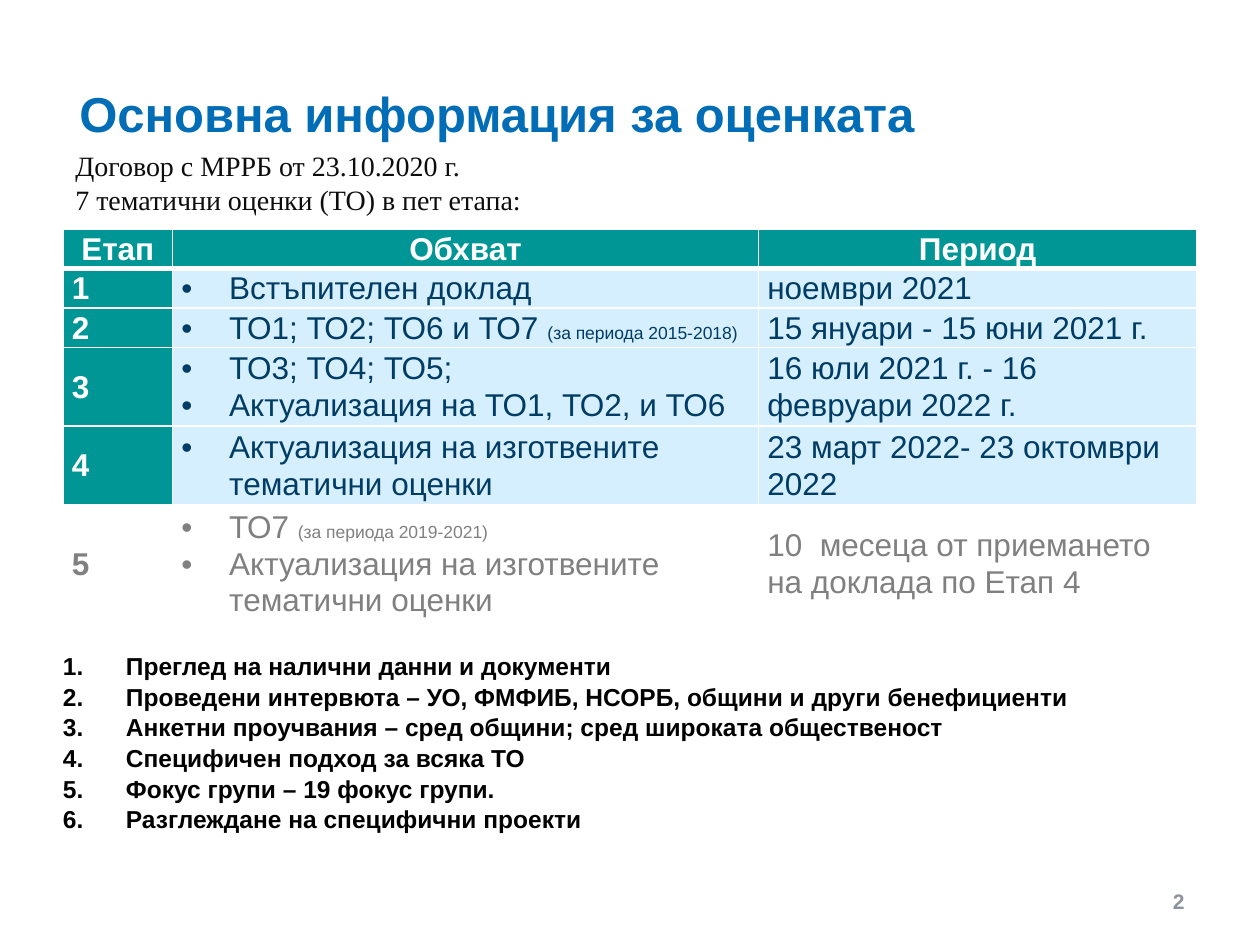
from dataclasses import dataclass
from lxml.etree import SubElement
from pptx import Presentation
from pptx.dml.color import RGBColor
from pptx.enum.text import MSO_ANCHOR, PP_ALIGN
from pptx.oxml.ns import qn
from pptx.util import Inches, Pt


@dataclass(frozen=True)
class Theme:
    sans: str = "Arial"
    serif: str = "Times New Roman"
    blue: str = "006DB6"
    teal: str = "009696"
    navy: str = "003C64"
    pale: str = "D6EFFF"
    white: str = "FFFFFF"
    grey: str = "808080"
    slate: str = "8C929F"
    ink: str = "0D0D0D"
    black: str = "000000"
    head: int = 28
    body: int = 18
    intro: int = 16
    item: int = 14
    page: int = 12
    note: int = 10


T = Theme()
HEADS = ("Етап", "Обхват", "Период")
# Each stage: scope lines (text, small note) and period.
STAGES = (
    ([("Встъпителен доклад", "")], "ноември 2021"),
    ([("ТО1; ТО2; ТО6 и ТО7 ", "(за периода 2015-2018)")],
     "15 януари - 15 юни 2021 г."),
    ([("ТО3; ТО4; ТО5;", ""), ("Актуализация на ТО1, ТО2, и ТО6", "")],
     "16 юли 2021 г. - 16 февруари 2022 г."),
    ([("Актуализация на изготвените тематични оценки", "")],
     "23 март 2022- 23 октомври 2022"),
    ([("ТО7 ", "(за периода 2019-2021)"),
      ("Актуализация на изготвените тематични оценки", "")],
     "10  месеца от приемането на доклада по Етап 4"),
)
STEPS = (
    "Преглед на налични данни и документи",
    "Проведени интервюта – УО, ФМФИБ, НСОРБ, общини и други бенефициенти",
    "Анкетни проучвания – сред общини; сред широката общественост",
    "Специфичен подход за всяка ТО",
    "Фокус групи – 19 фокус групи.",
    "Разглеждане на специфични проекти",
)


def write(frame, lines, size=T.body, color=T.black, font=T.sans, bold=False,
          align=PP_ALIGN.LEFT, space=1.0, mark=None, indent=0):
    """Fill a frame; a line is a text or a (text, small note) pair."""
    frame.word_wrap = True
    for i, line in enumerate(lines):
        para = frame.paragraphs[0] if i == 0 else frame.add_paragraph()
        para.alignment, para.line_spacing = align, space
        if mark:
            props = para._p.get_or_add_pPr()
            props.set("marL", str(Inches(indent)))
            props.set("indent", str(-Inches(indent)))
            if mark == "1.":
                SubElement(props, qn("a:buFont"), typeface="+mj-lt")
                SubElement(props, qn("a:buAutoNum"), type="arabicPeriod")
            else:
                SubElement(props, qn("a:buFont"), typeface=T.sans)
                SubElement(props, qn("a:buChar"), char=mark)
        text, note = (line, "") if isinstance(line, str) else line
        for part, pts in ((text, size), (note, T.note)):
            if part:
                run = para.add_run()
                run.text = part
                run.font.size, run.font.name = Pt(pts), font
                run.font.bold = bold
                run.font.color.rgb = RGBColor.from_string(color)


def panel(slide, box, lines, inset=0, anchor=MSO_ANCHOR.TOP, **style):
    frame = slide.shapes.add_textbox(*map(Inches, box)).text_frame
    frame.margin_left = frame.margin_right = Inches(inset)
    frame.margin_top = frame.margin_bottom = Inches(inset / 2)
    frame.vertical_anchor = anchor
    write(frame, lines, **style)


def edge(cell, base):
    """Draw white cell borders, with the given width below."""
    props = cell._tc.get_or_add_tcPr()
    for at, (side, wide) in enumerate(zip("LRTB", (1, 1, 1, base))):
        line = SubElement(props, qn(f"a:ln{side}"), w=str(Pt(wide)))
        fill = SubElement(line, qn("a:solidFill"))
        SubElement(fill, qn("a:srgbClr"), val=T.white)
        props.insert(at, line)


def put(cell, lines, fill, base=1, **style):
    cell.margin_left = cell.margin_right = Inches(0.07)
    cell.margin_top = cell.margin_bottom = 0
    cell.vertical_anchor = MSO_ANCHOR.MIDDLE
    cell.fill.solid()
    cell.fill.fore_color.rgb = RGBColor.from_string(fill)
    edge(cell, base)
    write(cell.text_frame, lines, space=1.04, **style)


def stages(slide, box):
    left, top, wide, line = box
    tall = (1, 1, 1, 2, 2, 3)
    grid = slide.shapes.add_table(
        len(tall), len(HEADS), Inches(left), Inches(top),
        Inches(wide), Inches(line * sum(tall))).table
    for col, share in zip(grid.columns, (0.87, 4.65, 3.48)):
        col.width = Inches(wide * share / 9)
    for row, count in zip(grid.rows, tall):
        row.height = Inches(line * count)
    for c, name in enumerate(HEADS):
        put(grid.cell(0, c), [name], T.teal, base=3, color=T.white,
            bold=True, align=PP_ALIGN.CENTER)
    for r, (scope, period) in enumerate(STAGES, 1):
        last = r == len(STAGES)
        tint, ink = (T.white, T.grey) if last else (T.pale, T.navy)
        put(grid.cell(r, 0), [str(r)], T.white if last else T.teal,
            color=T.grey if last else T.white, bold=True)
        put(grid.cell(r, 1), scope, tint, color=ink, mark="•", indent=0.38)
        put(grid.cell(r, 2), [period], tint, color=ink)


def main():
    deck = Presentation()
    deck.slide_width, deck.slide_height = Inches(10), Inches(7.5)
    slide = deck.slides.add_slide(deck.slide_layouts[6])
    panel(slide, (0.63, 0.71, 8.27, 0.47), ["Основна информация за оценката"],
          size=T.head, color=T.blue, bold=True, space=Pt(30))
    panel(slide, (0.5, 1.13, 9, 0.62),
          ["Договор с МРРБ от 23.10.2020 г.",
           "7 тематични оценки (ТО) в пет етапа:"],
          inset=0.1, size=T.intro, color=T.ink, font=T.serif,
          align=PP_ALIGN.JUSTIFY)
    stages(slide, (0.5, 1.82, 9, 0.3))
    panel(slide, (0.5, 5.16, 9, 1.82), STEPS, size=T.item, bold=True,
          space=1.04, mark="1.", indent=0.5)
    panel(slide, (7.17, 6.95, 2.33, 0.4), ["2"], inset=0.1,
          anchor=MSO_ANCHOR.MIDDLE, size=T.page, color=T.slate, bold=True,
          align=PP_ALIGN.RIGHT)
    deck.save("out.pptx")


if __name__ == "__main__":
    main()
